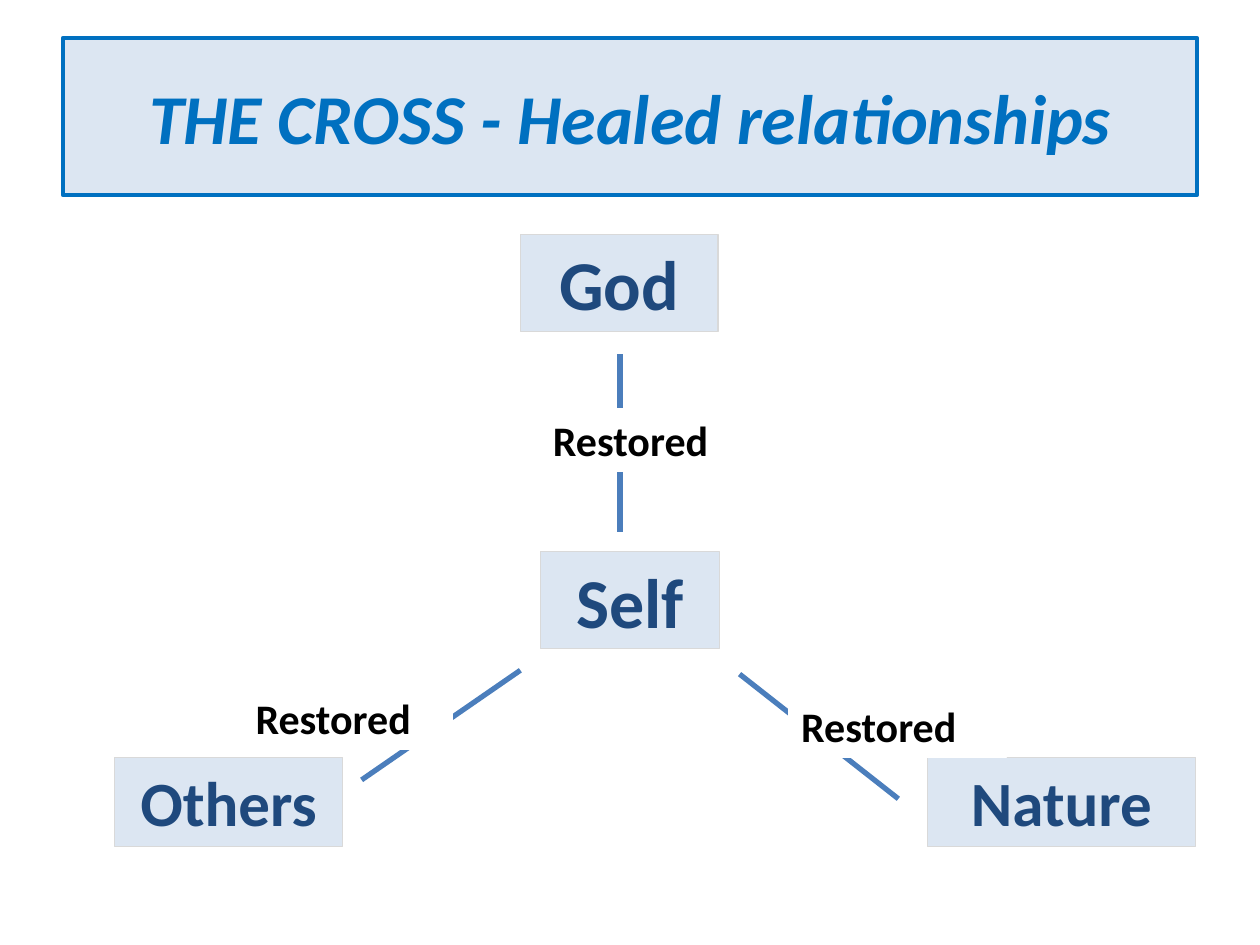
from dataclasses import dataclass

from lxml import etree
from pptx import Presentation
from pptx.dml.color import RGBColor
from pptx.enum import shapes, text
from pptx.oxml import ns
from pptx.util import Inches, Pt

FONT = "Calibri"
COLORS = {
    "pale": "DCE6F2",
    "title": "0070C0",
    "navy": "1F497D",
    "border": "D9D9D9",
    "link": "4B7EBC",
    "white": "FFFFFF",
    "black": "000000",
}


@dataclass(frozen=True)
class BoxStyle:
    fill: str
    line: str
    font: str
    line_width: float = 0.75
    align: text.PP_ALIGN = text.PP_ALIGN.CENTER
    anchor: text.MSO_ANCHOR = text.MSO_ANCHOR.TOP
    italic: bool = False


@dataclass(frozen=True)
class Box:
    words: str
    left: float
    top: float
    width: float
    height: float
    size: int
    style: BoxStyle


@dataclass(frozen=True)
class Link:
    x1: float
    y1: float
    x2: float
    y2: float


TITLE = BoxStyle("pale", "title", "title", 2.25, anchor=text.MSO_ANCHOR.MIDDLE, italic=True)
NODE = BoxStyle("pale", "border", "navy")
LABEL = BoxStyle("white", "white", "black", align=text.PP_ALIGN.LEFT)

HEADING_AND_NODES = [
    Box("THE CROSS - Healed relationships", 0.5, 0.3, 9, 1.25, 40, TITLE),
    Box("God", 4.13, 1.86, 1.57, 0.77, 40, NODE),
    Box("Self", 4.29, 4.38, 1.42, 0.77, 40, NODE),
    Box("Others", 0.91, 6.01, 1.81, 0.71, 36, NODE),
    Box("Nature", 7.36, 6.01, 2.13, 0.71, 36, NODE),
]
LINKS = [
    Link(4.92, 2.81, 4.92, 4.22),
    Link(5.87, 5.35, 7.13, 6.34),
    Link(4.13, 5.32, 2.87, 6.19),
]
LABELS = [
    Box("Restored", left, top, width, 0.5, 24, LABEL)
    for left, top, width in [(4.29, 3.24, 1.73), (6.26, 5.51, 1.73), (1.93, 5.45, 1.66)]
]


def color(name: str) -> RGBColor:
    return RGBColor.from_string(COLORS[name])


def draw_box(slide, box: Box) -> None:
    style = box.style
    shape = slide.shapes.add_shape(
        shapes.MSO_SHAPE.RECTANGLE,
        Inches(box.left), Inches(box.top), Inches(box.width), Inches(box.height),
    )
    shape.shadow.inherit = False
    shape.fill.solid()
    shape.fill.fore_color.rgb = color(style.fill)
    shape.line.color.rgb = color(style.line)
    shape.line.width = Pt(style.line_width)

    frame = shape.text_frame
    frame.word_wrap = True
    frame.vertical_anchor = style.anchor
    frame.text = box.words
    paragraph = frame.paragraphs[0]
    paragraph.alignment = style.align
    font = paragraph.runs[0].font
    font.name = FONT
    font.size = Pt(box.size)
    font.bold = True
    font.italic = style.italic
    font.color.rgb = color(style.font)


def draw_link(slide, link: Link) -> None:
    connector = slide.shapes.add_connector(
        shapes.MSO_CONNECTOR.STRAIGHT,
        Inches(link.x1), Inches(link.y1), Inches(link.x2), Inches(link.y2),
    )
    connector.line.color.rgb = color("link")
    connector.line.width = Pt(3)
    etree.SubElement(connector._element.spPr, ns.qn("a:effectLst"))


def main() -> None:
    presentation = Presentation()
    presentation.slide_width = Inches(10)
    presentation.slide_height = Inches(7.5)
    slide = presentation.slides.add_slide(presentation.slide_layouts[6])
    for box in HEADING_AND_NODES:
        draw_box(slide, box)
    for link in LINKS:
        draw_link(slide, link)
    for label in LABELS:
        draw_box(slide, label)
    presentation.save("out.pptx")


if __name__ == "__main__":
    main()
